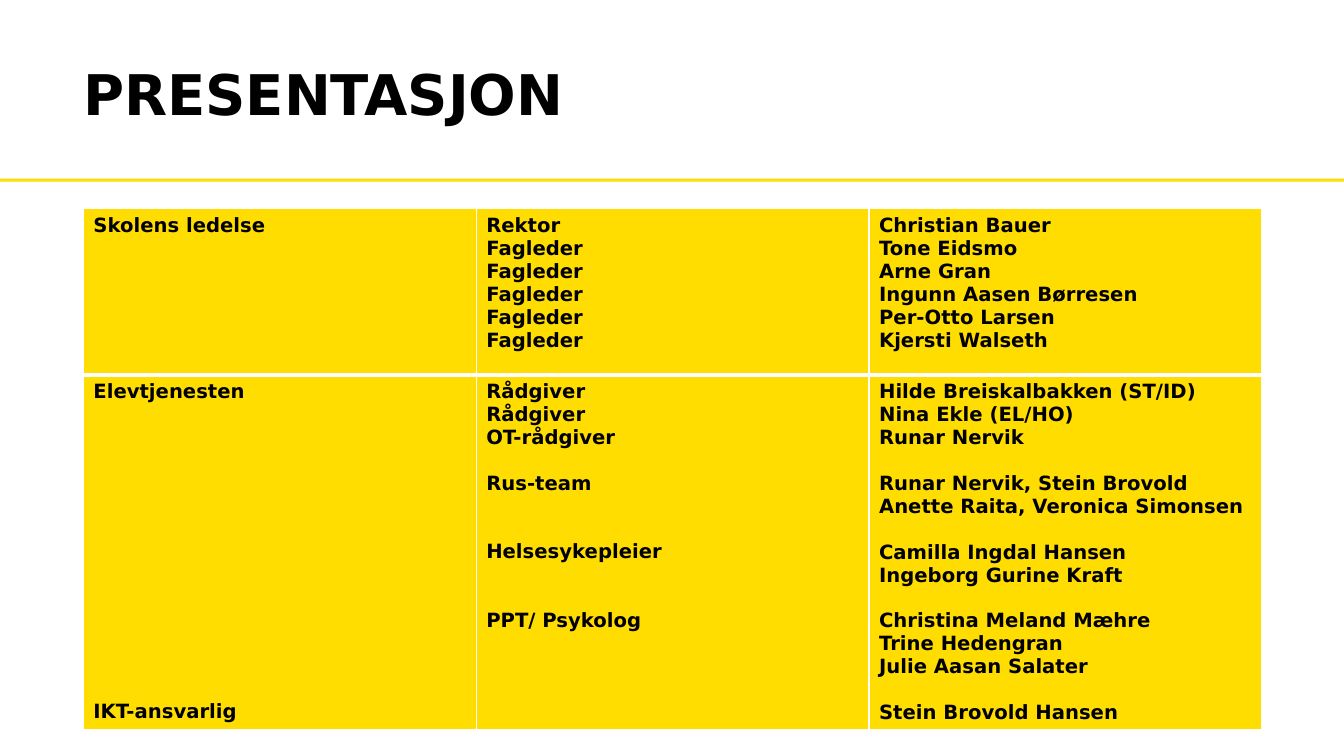
from dataclasses import dataclass

import pptx
import pptx.dml.color
import pptx.enum.shapes
import pptx.enum.text
import pptx.oxml
import pptx.oxml.ns
import pptx.util
from pptx.util import Cm


@dataclass(frozen=True)
class Theme:
    font: str = "DejaVu Sans"
    text: str = "000000"
    accent: str = "FFDD00"
    border: str = "FFFFFF"
    title_size: int = 40
    body_size: int = 14
    line_pitch: float = 16.3


THEME = Theme()

STAFF = [
    [
        ["Skolens ledelse"],
        ["Rektor"] + ["Fagleder"] * 5,
        ["Christian Bauer", "Tone Eidsmo", "Arne Gran",
         "Ingunn Aasen Børresen", "Per-Otto Larsen", "Kjersti Walseth"],
    ],
    [
        ["Elevtjenesten", (13, "IKT-ansvarlig")],
        ["Rådgiver", "Rådgiver", "OT-rådgiver", (1, "Rus-team"),
         (2, "Helsesykepleier"), (2, "PPT/ Psykolog")],
        ["Hilde Breiskalbakken (ST/ID)", "Nina Ekle (EL/HO)", "Runar Nervik",
         (1, "Runar Nervik, Stein Brovold"), "Anette Raita, Veronica Simonsen",
         (1, "Camilla Ingdal Hansen"), "Ingeborg Gurine Kraft",
         (1, "Christina Meland Mæhre"), "Trine Hedengran", "Julie Aasan Salater",
         (1, "Stein Brovold Hansen")],
    ],
]


def rgb(color):
    return pptx.dml.color.RGBColor.from_string(color)


def format_runs(p, size):
    for r in p.runs:
        r.font.name = THEME.font
        r.font.size = pptx.util.Pt(size)
        r.font.bold = True
        r.font.color.rgb = rgb(THEME.text)


def add_title(s, text):
    sp = s.shapes.title
    sp.left, sp.top, sp.width, sp.height = Cm(2.1), Cm(0.91), Cm(26.67), Cm(3.07)
    tf = sp.text_frame
    tf.text = text
    tf.word_wrap = True
    tf.auto_size = pptx.enum.text.MSO_AUTO_SIZE.NONE
    tf.vertical_anchor = pptx.enum.text.MSO_ANCHOR.MIDDLE
    tf.margin_left = tf.margin_top = tf.margin_right = tf.margin_bottom = 0
    p = tf.paragraphs[0]
    p.alignment = pptx.enum.text.PP_ALIGN.LEFT
    p.line_spacing = 0.9
    format_runs(p, THEME.title_size)


def add_rule(s, top, width):
    sp = s.shapes.add_shape(pptx.enum.shapes.MSO_SHAPE.RECTANGLE,
                            0, top, width, Cm(0.08))
    sp.shadow.inherit = False
    sp.fill.solid()
    sp.fill.fore_color.rgb = rgb(THEME.accent)
    sp.line.fill.background()


def set_borders(cell, **widths):
    tc_pr = cell._tc.get_or_add_tcPr()
    for side in "LRTB":
        tc_pr.append(pptx.oxml.parse_xml(
            f'<a:ln{side} {pptx.oxml.ns.nsdecls("a")} w="{pptx.util.Pt(widths.get(side, 1))}">'
            f'<a:solidFill><a:srgbClr val="{THEME.border}"/></a:solidFill></a:ln{side}>'))


def fill_cell(cell, entries):
    cell.fill.solid()
    cell.fill.fore_color.rgb = rgb(THEME.accent)
    tf = cell.text_frame
    for i, entry in enumerate(entries):
        gap, text = entry if isinstance(entry, tuple) else (0, entry)
        p = tf.add_paragraph() if i else tf.paragraphs[0]
        p.text = text
        if gap:
            p.space_before = pptx.util.Pt(gap * THEME.line_pitch)
        format_runs(p, THEME.body_size)


def add_staff_table(s, rows, left, top, col_width, heights):
    n_cols = len(rows[0])
    table = s.shapes.add_table(len(rows), n_cols, left, top,
                               col_width * n_cols, sum(heights)).table
    table.first_row = table.horz_banding = False
    for col in table.columns:
        col.width = col_width
    for i, (row, height) in enumerate(zip(rows, heights)):
        table.rows[i].height = height
        for j, entries in enumerate(row):
            cell = table.cell(i, j)
            set_borders(cell, **({"T": 3} if i else {"B": 3}))
            fill_cell(cell, entries)


def main():
    prs = pptx.Presentation()
    prs.slide_width, prs.slide_height = Cm(33.87), Cm(19.05)
    s = prs.slides.add_slide(prs.slide_layouts[5])
    add_rule(s, Cm(4.5), prs.slide_width)
    add_staff_table(s, STAFF, Cm(2.1), Cm(5.26), Cm(9.9), [Cm(4.19), Cm(8.9)])
    add_title(s, "PRESENTASJON")
    prs.save("out.pptx")


if __name__ == "__main__":
    main()
